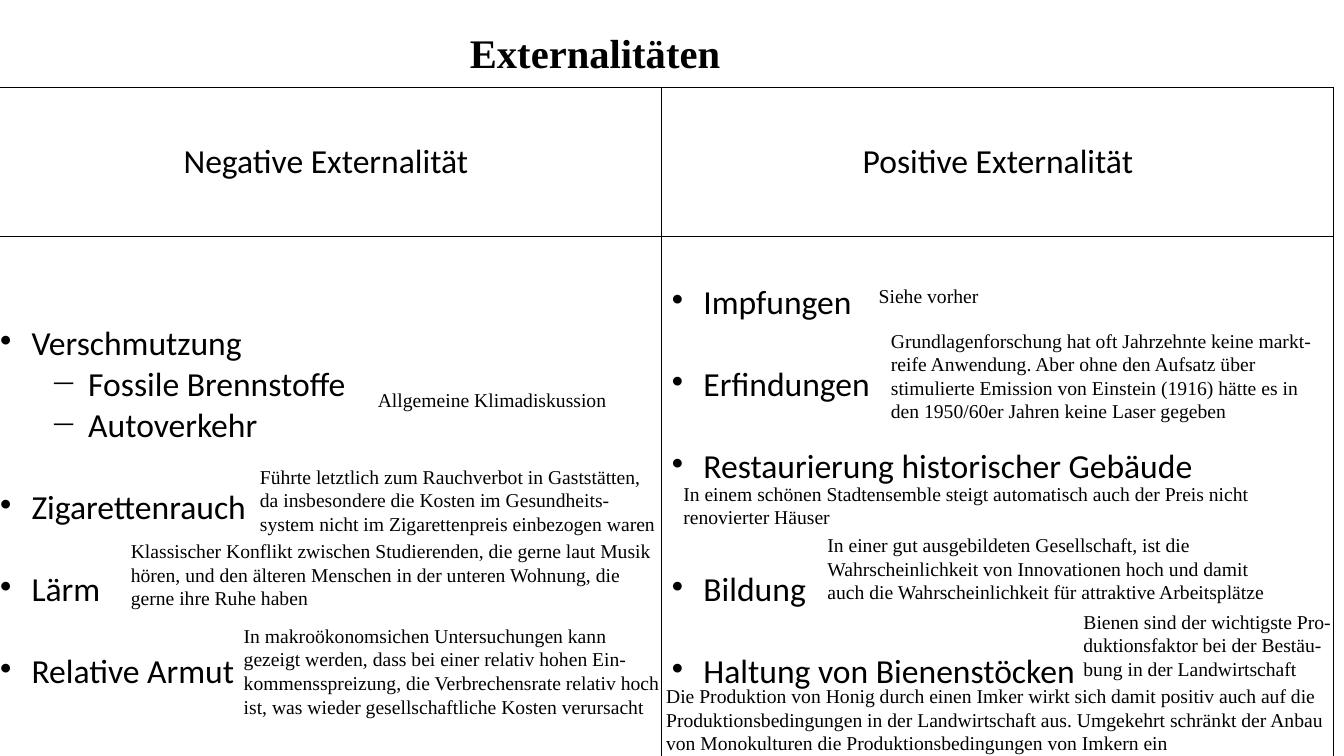
from dataclasses import dataclass

from lxml import etree
from pptx import Presentation
from pptx.dml.color import RGBColor
from pptx.enum.text import MSO_ANCHOR, MSO_AUTO_SIZE, PP_ALIGN
from pptx.oxml.ns import qn
from pptx.util import Pt

CENTER = PP_ALIGN.CENTER
LEFT = PP_ALIGN.LEFT
TOP = MSO_ANCHOR.TOP
MIDDLE = MSO_ANCHOR.MIDDLE
FIXED_SIZE = MSO_AUTO_SIZE.NONE

BLACK = "000000"
SERIF = "Times New Roman"
SANS = "Calibri"
TITLE_ONLY = 5
LIST_SIZE = 24
LINE = 29.3
CELL_INSET = 3.6
COLUMN_WIDTH = 480
ROW_HEIGHTS = (106.6, 371.2)


@dataclass(frozen=True)
class Item:
    text: str
    level: int = 0
    lines_before: int = 1


@dataclass(frozen=True)
class Effect:
    heading: str
    top_lines: int
    items: tuple[Item, ...]


@dataclass(frozen=True)
class Remark:
    text: str
    left: float
    top: float
    width: float
    height: float


@dataclass(frozen=True)
class Bullet:
    character: str
    margin: float
    hanging: float


BULLETS = (Bullet("•", 22.5, 22.5), Bullet("−", 63, 27))

EFFECTS = (
    Effect("Negative Externalität", 2, (
        Item("Verschmutzung", 0, 0),
        Item("Fossile Brennstoffe", 1, 0),
        Item("Autoverkehr", 1, 0),
        Item("Zigarettenrauch"),
        Item("Lärm"),
        Item("Relative Armut"),
    )),
    Effect("Positive Externalität", 1, (
        Item("Impfungen", 0, 0),
        Item("Erfindungen"),
        Item("Restaurierung historischer Gebäude"),
        Item("Bildung", 0, 2),
        Item("Haltung von Bienenstöcken"),
    )),
)

REMARKS = (
    Remark("Allgemeine Klimadiskussion", 262.8, 273.6, 206.6, 24.5),
    Remark("In makroökonomsichen Untersuchungen kann gezeigt werden, dass bei einer "
           "relativ hohen Ein- kommensspreizung, die Verbrechensrate relativ hoch ist, "
           "was wieder gesellschaftliche Kosten verursacht", 167, 442.1, 314, 69),
    Remark("Führte letztlich zum Rauchverbot in Gaststätten, da insbesondere die Kosten im "
           "Gesundheits- system nicht im Zigarettenpreis einbezogen waren",
           178.6, 328.3, 302.4, 59.8),
    Remark("Klassischer Konflikt zwischen Studierenden, die gerne laut Musik hören, und den "
           "älteren Menschen in der unteren Wohnung, die gerne ihre Ruhe haben",
           86.4, 381.6, 391, 59.8),
    Remark("Siehe vorher", 620.6, 199.4, 206.6, 24.5),
    Remark("Grundlagenforschung hat oft Jahrzehnte keine markt- reife Anwendung. Aber ohne "
           "den Aufsatz über stimulierte Emission von Einstein (1916) hätte es in den "
           "1950/60er Jahren keine Laser gegeben", 629.3, 231.1, 321.8, 69.8),
    Remark("In einem schönen Stadtensemble steigt automatisch auch der Preis nicht "
           "renovierter Häuser", 481, 340.6, 470.2, 39.6),
    Remark("In einer gut ausgebildeten Gesellschaft, ist die Wahrscheinlichkeit von "
           "Innovationen hoch und damit auch die Wahrscheinlichkeit für attraktive "
           "Arbeitsplätze", 583.9, 377.3, 338, 59),
    Remark("Die Produktion von Honig durch einen Imker wirkt sich damit positiv auch auf die "
           "Produktionsbedingungen in der Landwirtschaft aus. Umgekehrt schränkt der Anbau "
           "von Monokulturen die Produktionsbedingungen von Imkern ein",
           468.7, 485.3, 491, 53.3),
    Remark("Bienen sind der wichtigste Pro- duktionsfaktor bei der Bestäu- bung in der "
           "Landwirtschaft", 766.8, 432, 205.2, 56.9),
)


def color(value: str) -> RGBColor:
    return RGBColor.from_string(value)


def format_text(paragraph, size: float, name: str, bold: bool = False) -> None:
    for span in paragraph.runs:
        span.font.size = Pt(size)
        span.font.name = name
        span.font.bold = bold
        span.font.color.rgb = color(BLACK)


def add_bullet(para, bullet: Bullet) -> None:
    properties = para._p.get_or_add_pPr()
    properties.set("marL", str(Pt(bullet.margin)))
    properties.set("indent", str(-Pt(bullet.hanging)))
    etree.SubElement(properties, qn("a:buChar"), char=bullet.character)


def style_cell(cell) -> None:
    properties = cell._tc.get_or_add_tcPr()
    for side in ("a:lnL", "a:lnR", "a:lnT", "a:lnB"):
        border = etree.SubElement(properties, qn(side), w=str(Pt(1)))
        fill = etree.SubElement(border, qn("a:solidFill"))
        etree.SubElement(fill, qn("a:srgbClr"), val=BLACK)
    cell.fill.background()
    cell.margin_top = cell.margin_bottom = Pt(CELL_INSET)


def add_title(page, text: str) -> None:
    title = page.shapes.title
    title.left, title.top, title.width, title.height = Pt(126), Pt(8), Pt(598.3), Pt(58.3)
    frame = title.text_frame
    frame.text = text
    frame.auto_size = FIXED_SIZE
    frame.vertical_anchor = MIDDLE
    frame.paragraphs[0].alignment = CENTER
    format_text(frame.paragraphs[0], 29, SERIF, bold=True)


def fill_heading(cell, effect: Effect) -> None:
    style_cell(cell)
    cell.vertical_anchor = MIDDLE
    para = cell.text_frame.paragraphs[0]
    para.text = effect.heading
    para.alignment = CENTER
    format_text(para, LIST_SIZE, SANS)


def fill_list(cell, effect: Effect) -> None:
    style_cell(cell)
    cell.vertical_anchor = TOP
    cell.margin_top = Pt(CELL_INSET + effect.top_lines * LINE)
    frame = cell.text_frame
    frame.text = "\n".join(item.text for item in effect.items)
    for para, item in zip(frame.paragraphs, effect.items):
        para.level = item.level
        add_bullet(para, BULLETS[item.level])
        para.alignment = LEFT
        para.space_before = Pt(item.lines_before * LINE)
        format_text(para, LIST_SIZE, SANS)


def add_effects_table(page) -> None:
    frame = page.shapes.add_table(len(ROW_HEIGHTS), len(EFFECTS), Pt(-7.2), Pt(62.6),
                                  Pt(COLUMN_WIDTH * len(EFFECTS)), Pt(sum(ROW_HEIGHTS)))
    table = frame.table
    table.first_row = table.horz_banding = False
    for row, height in zip(table.rows, ROW_HEIGHTS):
        row.height = Pt(height)
    for index, effect in enumerate(EFFECTS):
        table.columns[index].width = Pt(COLUMN_WIDTH)
        fill_heading(table.cell(0, index), effect)
        fill_list(table.cell(1, index), effect)


def add_remark(page, remark: Remark) -> None:
    box = page.shapes.add_textbox(Pt(remark.left), Pt(remark.top),
                                  Pt(remark.width), Pt(remark.height))
    frame = box.text_frame
    frame.word_wrap = True
    frame.text = remark.text
    format_text(frame.paragraphs[0], 14, SERIF)


def main() -> None:
    deck = Presentation()
    deck.slide_width, deck.slide_height = Pt(960), Pt(540)
    page = deck.slides.add_slide(deck.slide_layouts[TITLE_ONLY])
    add_title(page, "Externalitäten")
    add_effects_table(page)
    for remark in REMARKS:
        add_remark(page, remark)
    deck.save("out.pptx")


if __name__ == "__main__":
    main()
